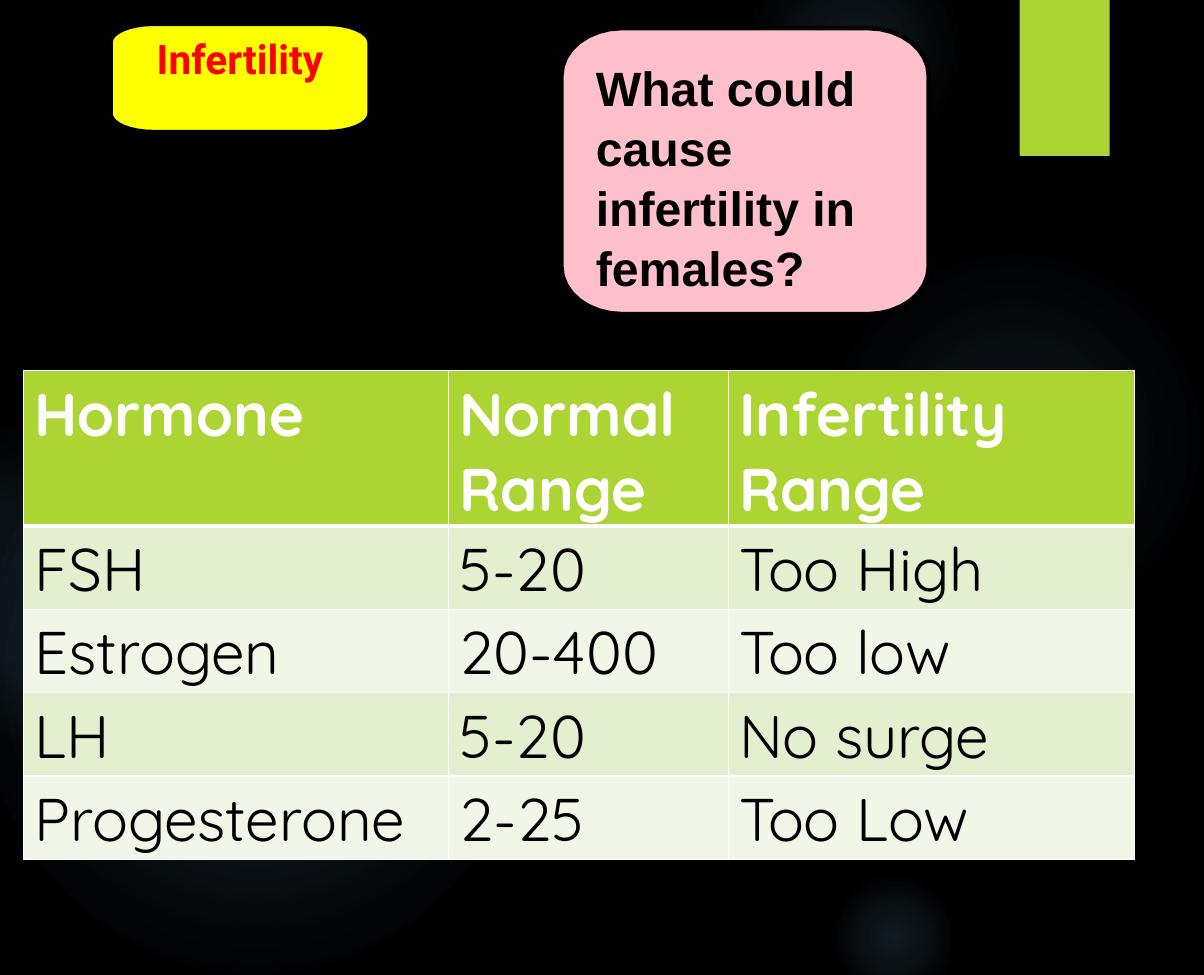
import math
from typing import NamedTuple

from lxml import etree
from pptx import Presentation, util as u
from pptx.dml.color import RGBColor
from pptx.enum import shapes, text
from pptx.oxml import parse_xml
from pptx.oxml.ns import nsdecls, qn

PX = 9144  # EMU in one px, 100 px to the inch
BLACK, WHITE, LIME, SKY = "000000", "FFFFFF", "ACD433", "7AC4F0"


class Box(NamedTuple):
    x: int
    y: int
    w: int
    h: int

    def emu(self) -> tuple[int, ...]:
        return tuple(n * PX for n in self)


class Glow(NamedTuple):
    box: Box
    stops: tuple[tuple[int, int], ...]  # position and opacity, in percent


class Card(NamedTuple):
    box: Box
    rx: int
    ry: int
    fill: str


GLOWS = (
    Glow(Box(765, 220, 343, 370), ((0, 7), (36, 6), (69, 0))),
    Glow(Box(691, -60, 194, 210), ((0, 14), (36, 7), (73, 0))),
    Glow(Box(765, 800, 120, 130), ((0, 14), (36, 7), (66, 0))),
    Glow(Box(-19, 350, 509, 550), ((0, 11), (36, 10), (75, 0))),
    Glow(Box(-102, 380, 287, 310), ((0, 8), (36, 8), (72, 0))),
)
CARDS = (
    Card(Box(102, 22, 239, 100), 40, 17, "FFFF00"),
    Card(Box(518, 26, 339, 264), 56, 44, "FFC0CB"),
)
TABLE = Box(22, 342, 1025, 450)
COLS = (392, 258, 375)
HEAD, ROW = 142, 77
DATA = (
    ("Hormone", "Normal Range", "Infertility Range"),
    ("FSH", "5-20", "Too High"),
    ("Estrogen", "20-400", "Too low"),
    ("LH", "5-20", "No surge"),
    ("Progesterone", "2-25", "Too Low"),
)


def rgb(code: str) -> RGBColor:
    return RGBColor.from_string(code)


def paint(shape, fill: str) -> None:
    shape.shadow.inherit = False
    shape.fill.solid()
    shape.fill.fore_color.rgb = rgb(fill)


def style(para, size: int, face: str, color: str, bold: bool = True) -> None:
    font = para.font
    font.size, font.name, font.bold = u.Pt(size), face, bold
    font.color.rgb = rgb(color)


def draw_glow(slide, glow: Glow) -> None:
    oval = slide.shapes.add_shape(shapes.MSO_SHAPE.OVAL, *glow.box.emu())
    paint(oval, SKY)
    oval.line.fill.background()
    stops = "".join(
        f'<a:gs pos="{pos * 1000}"><a:srgbClr val="{SKY}">'
        f'<a:alpha val="{alpha * 1000}"/></a:srgbClr></a:gs>'
        for pos, alpha in glow.stops)
    grad = parse_xml(
        f'<a:gradFill {nsdecls("a")} rotWithShape="1"><a:gsLst>{stops}</a:gsLst>'
        '<a:path path="circle"><a:fillToRect l="50000" t="50000" r="50000" b="50000"/>'
        '</a:path></a:gradFill>')
    props = oval.element.spPr
    props.replace(props.find(qn("a:solidFill")), grad)


def draw_card(slide, card: Card) -> None:
    """Draw a box whose corners are quarter ellipses."""
    x, y, w, h = card.box
    right, low = x + w - card.rx, y + h - card.ry
    left, top = x + card.rx, y + card.ry
    mids = ((right, low), (left, low), (left, top), (right, top))
    dots = []
    for turn, (cx, cy) in enumerate(mids):
        for step in range(9):
            ang = math.radians(90 * turn + 90 * step / 8)
            dots.append((round((cx + card.rx * math.cos(ang)) * PX),
                         round((cy + card.ry * math.sin(ang)) * PX)))
    path = slide.shapes.build_freeform(*dots[0])
    path.add_line_segments(dots[1:])
    shape = path.convert_to_shape()
    paint(shape, card.fill)
    shape.line.color.rgb = rgb(BLACK)
    shape.line.width = u.Pt(3)


def set_edge(cell, side: str, width: int) -> None:
    props = cell._tc.get_or_add_tcPr()
    line = etree.SubElement(props, qn(f"a:ln{side}"), w=str(u.Pt(width)))
    fill = etree.SubElement(line, qn("a:solidFill"))
    etree.SubElement(fill, qn("a:srgbClr"), val=WHITE)


def draw_table(slide) -> None:
    grid = slide.shapes.add_table(len(DATA), len(COLS), *TABLE.emu()).table
    for col, width in zip(grid.columns, COLS):
        col.width = width * PX
    for i, words in enumerate(DATA):
        grid.rows[i].height = (ROW if i else HEAD) * PX
        fill = ("E3EFCE" if i % 2 else "F1F7E8") if i else LIME
        for j, word in enumerate(words):
            cell = grid.cell(i, j)
            cell.text = word
            style(cell.text_frame.paragraphs[0], 40, "Quicksand",
                  BLACK if i else WHITE, i == 0)
            for side in "LRTB":
                rule = (i, side) in ((0, "B"), (1, "T"))
                set_edge(cell, side, 3 if rule else 1)
            cell.fill.solid()
            cell.fill.fore_color.rgb = rgb(fill)


def place_title(slide) -> None:
    title = slide.shapes.title
    title.left, title.top, title.width, title.height = Box(129, 26, 185, 56).emu()
    frame = title.text_frame
    frame.text = "Infertility"
    frame.auto_size = text.MSO_AUTO_SIZE.NONE
    frame.vertical_anchor = text.MSO_ANCHOR.TOP
    para = frame.paragraphs[0]
    para.alignment = text.PP_ALIGN.CENTER
    style(para, 27, "Roboto", "FF0000")
    title.element.getparent().append(title.element)  # in front of its card


def add_query(slide) -> None:
    frame = slide.shapes.add_textbox(*Box(540, 47, 339, 226).emu()).text_frame
    frame.word_wrap = True
    frame.text = "What could cause infertility in females?"
    para = frame.paragraphs[0]
    para.line_spacing = 1.04
    style(para, 32, "Arial", BLACK)


def main() -> None:
    deck = Presentation()
    deck.slide_width, deck.slide_height = 1111 * PX, 900 * PX
    slide = deck.slides.add_slide(deck.slide_layouts.get_by_name("Title Only"))
    back = slide.background.fill
    back.solid()
    back.fore_color.rgb = rgb(BLACK)
    for glow in GLOWS:
        draw_glow(slide, glow)
    tab = slide.shapes.add_shape(shapes.MSO_SHAPE.RECTANGLE,
                                 *Box(941, 0, 83, 144).emu())
    paint(tab, LIME)
    tab.line.fill.background()
    for card in CARDS:
        draw_card(slide, card)
    place_title(slide)
    add_query(slide)
    draw_table(slide)
    deck.save("out.pptx")


if __name__ == "__main__":
    main()
